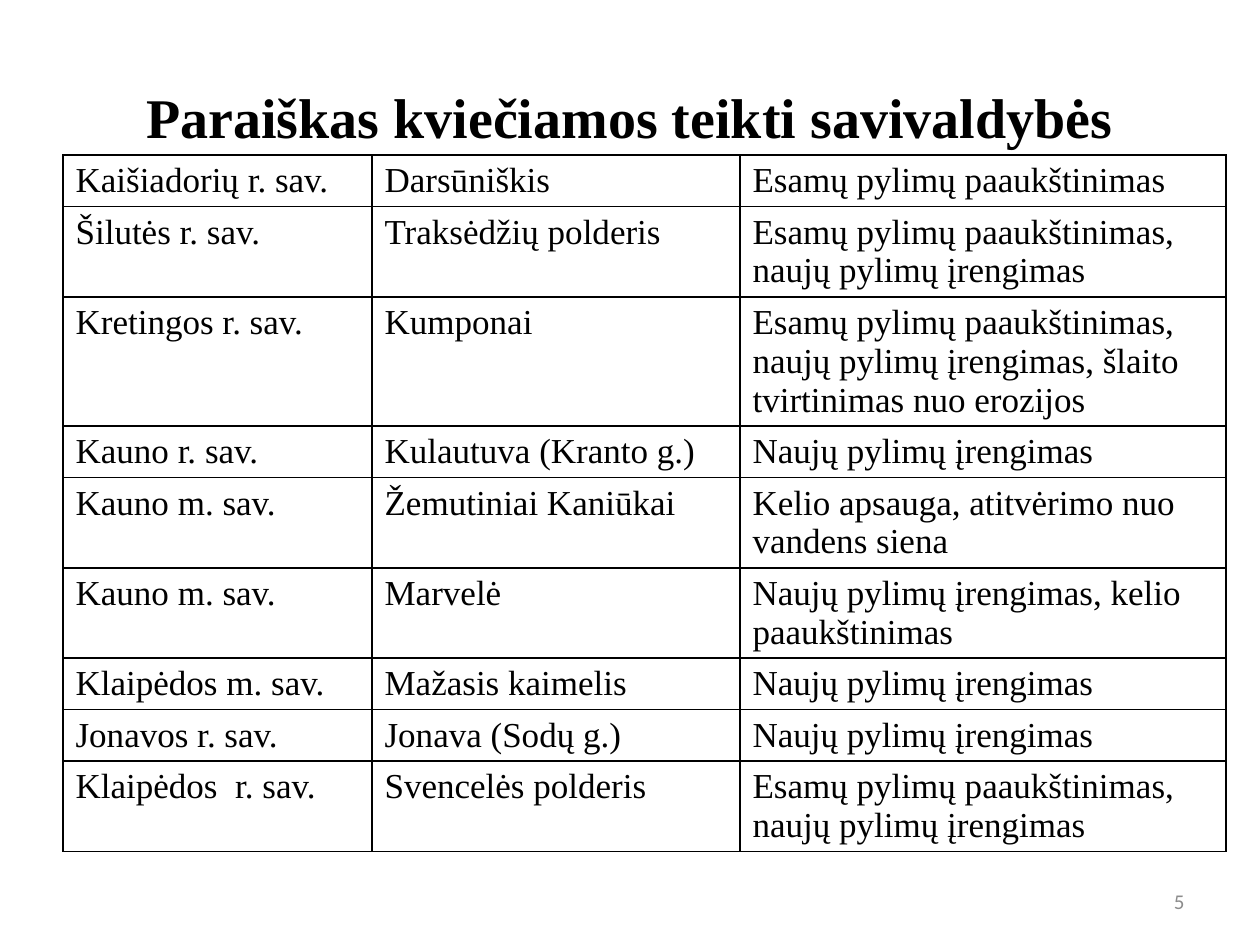
from lxml import etree
from pptx import Presentation
from pptx.dml.color import RGBColor
from pptx.enum.text import MSO_ANCHOR, PP_ALIGN
from pptx.oxml.ns import qn
from pptx.util import Emu, Pt

MIDDLE = MSO_ANCHOR.MIDDLE
CENTER, RIGHT = PP_ALIGN.CENTER, PP_ALIGN.RIGHT
EMU_PER_PX = 914400 / 126
SERIF = "Times New Roman"
BLACK = "000000"


def px(length):
    return Emu(round(length * EMU_PER_PX))


def format_font(font, color, **values):
    for name, value in values.items():
        setattr(font, name, value)
    font.color.rgb = RGBColor.from_string(color)


presentation = Presentation()
presentation.slide_width, presentation.slide_height = px(1260), px(945)
slide = presentation.slides.add_slide(presentation.slide_layouts[5])

# Title
title = slide.shapes.title
title.left, title.top, title.width, title.height = map(px, (63, 38, 1134, 157))
title.text_frame.text = "Paraiškas kviečiamos teikti savivaldybės"
title.text_frame.vertical_anchor = MIDDLE
paragraph = title.text_frame.paragraphs[0]
paragraph.alignment = CENTER
format_font(paragraph.runs[0].font, BLACK, name=SERIF, size=Pt(32), bold=True)

# Municipalities: name, place, planned works, lines of text in the row
RAISE = "Esamų pylimų paaukštinimas"
BUILD = "Naujų pylimų įrengimas"
RAISE_AND_BUILD = f"{RAISE}, naujų pylimų įrengimas"
municipalities = [
    ("Kaišiadorių r. sav.", "Darsūniškis", RAISE, 1),
    ("Šilutės r. sav.", "Traksėdžių polderis", RAISE_AND_BUILD, 2),
    ("Kretingos r. sav.", "Kumponai",
     f"{RAISE_AND_BUILD}, šlaito tvirtinimas nuo erozijos", 3),
    ("Kauno r. sav.", "Kulautuva (Kranto g.)", BUILD, 1),
    ("Kauno m. sav.", "Žemutiniai Kaniūkai",
     "Kelio apsauga, atitvėrimo nuo vandens siena", 2),
    ("Kauno m. sav.", "Marvelė", f"{BUILD}, kelio paaukštinimas", 2),
    ("Klaipėdos m. sav.", "Mažasis kaimelis", BUILD, 1),
    ("Jonavos r. sav.", "Jonava (Sodų g.)", BUILD, 1),
    ("Klaipėdos  r. sav.", "Svencelės polderis", RAISE_AND_BUILD, 2),
]
column_widths = [309, 368, 486]
row_heights = [12 + 39 * lines for *_, lines in municipalities]

# Table
table = slide.shapes.add_table(
    len(row_heights), len(column_widths), px(63), px(155),
    px(sum(column_widths)), px(sum(row_heights))).table
table.first_row = table.horz_banding = False
for column, width in zip(table.columns, column_widths):
    column.width = px(width)

for row, height, (*texts, _) in zip(table.rows, row_heights, municipalities):
    row.height = px(height)
    for cell, text in zip(row.cells, texts):
        cell.text = text
        cell.fill.background()
        format_font(cell.text_frame.paragraphs[0].runs[0].font, BLACK,
                    name=SERIF, size=Pt(20))
        # Borders come before the fill in the cell properties
        properties = cell._tc.get_or_add_tcPr()
        for position, side in enumerate(("lnL", "lnR", "lnT", "lnB")):
            border = etree.Element(qn(f"a:{side}"), w=str(Pt(1)))
            fill = etree.SubElement(border, qn("a:solidFill"))
            etree.SubElement(fill, qn("a:srgbClr"), val=BLACK)
            properties.insert(position, border)

# Slide number
number = slide.shapes.add_textbox(*map(px, (903, 876, 294, 50)))
number.text_frame.word_wrap = True
number.text_frame.vertical_anchor = MIDDLE
number.text_frame.text = "5"
paragraph = number.text_frame.paragraphs[0]
paragraph.alignment = RIGHT
format_font(paragraph.runs[0].font, "8C8C8C", name="Calibri", size=Pt(12))

presentation.save("out.pptx")
